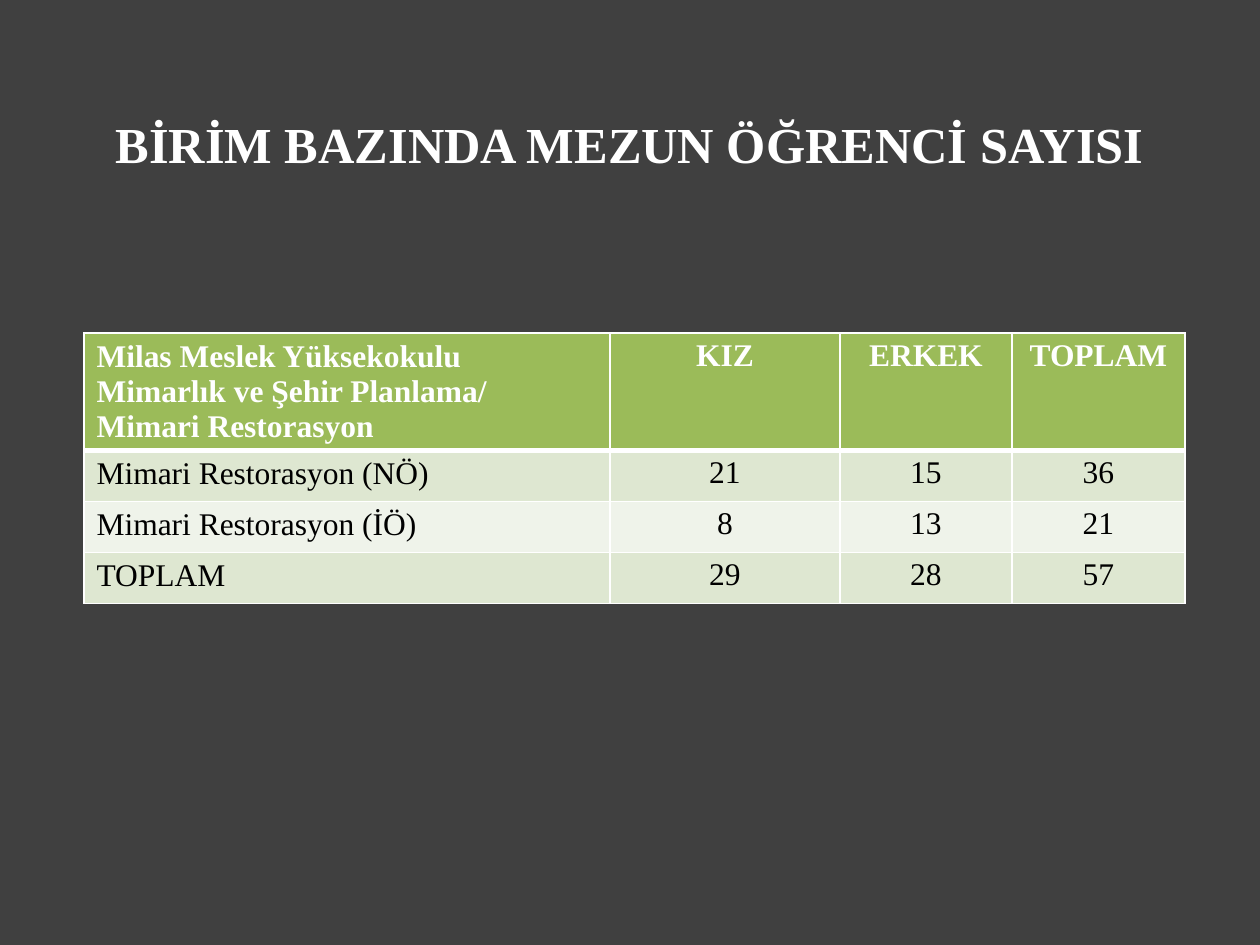
from dataclasses import dataclass

from lxml.etree import SubElement
from pptx import Presentation
from pptx.dml.color import RGBColor
from pptx.enum.text import MSO_ANCHOR, MSO_AUTO_SIZE, PP_ALIGN
from pptx.oxml.ns import qn
from pptx.util import Emu, Pt

SCALE = 914400 / 126


def px(n):
    """Turn pixels into EMU."""
    return Emu(round(n * SCALE))


@dataclass(frozen=True)
class Theme:
    """Colours, font and type sizes of the slide."""

    font: str = "Times New Roman"
    back: str = "404040"
    light: str = "FFFFFF"
    dark: str = "000000"
    head: str = "9BBB59"
    bands: tuple = ("DEE7D1", "EFF3EA")
    title: float = 28.8
    body: float = 18


class Deck:
    """Holds the theme and the current slide."""

    def __init__(self, theme, width, height):
        """Open a title-only slide on a plain ground."""
        self.theme = theme
        self.show = Presentation()
        self.show.slide_width, self.show.slide_height = px(width), px(height)
        self.slide = self.show.slides.add_slide(self.show.slide_layouts[5])
        fill = self.slide.background.fill
        fill.solid()
        fill.fore_color.rgb = RGBColor.from_string(theme.back)

    def run(self, para, text, size, color, bold):
        """Add one styled run."""
        run = para.add_run()
        run.text = text
        font = run.font
        font.name, font.size, font.bold = self.theme.font, Pt(size), bold
        font.color.rgb = RGBColor.from_string(color)

    def title(self, text, box, inset):
        """Place and fill the title."""
        shape = self.slide.shapes.title
        shape.left, shape.top, shape.width, shape.height = map(px, box)
        frame = shape.text_frame
        frame.auto_size = MSO_AUTO_SIZE.NONE
        frame.word_wrap = True
        frame.vertical_anchor = MSO_ANCHOR.TOP
        frame.margin_top, frame.margin_bottom = px(inset), 0
        para = frame.paragraphs[0]
        para.alignment = PP_ALIGN.CENTER
        self.run(para, text, self.theme.title, self.theme.light, True)

    def edge(self, cell, side, width):
        """Draw one white border of a cell."""
        props = cell._tc.get_or_add_tcPr()
        line = SubElement(props, qn(f"a:ln{side}"), w=str(Pt(width)))
        fill = SubElement(line, qn("a:solidFill"))
        SubElement(fill, qn("a:srgbClr"), val=self.theme.light)

    def cell(self, cell, text, row, col):
        """Style and fill one cell by its place in the grid."""
        theme, head = self.theme, row == 0
        for side in "LRTB":
            thick = (row, side) in ((0, "B"), (1, "T"))
            self.edge(cell, side, 3 if thick else 1)
        cell.fill.solid()
        shade = theme.head if head else theme.bands[(row - 1) % 2]
        cell.fill.fore_color.rgb = RGBColor.from_string(shade)
        if col:
            cell.margin_left = cell.margin_right = px(9)
            cell.margin_top = cell.margin_bottom = 0
        frame = cell.text_frame
        for i, part in enumerate(text.split("\n")):
            para = frame.add_paragraph() if i else frame.paragraphs[0]
            if col:
                para.alignment = PP_ALIGN.CENTER
                para.line_spacing = 1.15
            color = theme.light if head else theme.dark
            self.run(para, part, theme.body, color, head)

    def table(self, rows, left, top, widths, heights):
        """Add the table, row by row."""
        table = self.slide.shapes.add_table(
            len(rows), len(widths), px(left), px(top),
            px(sum(widths)), px(sum(heights))).table
        for col, width in zip(table.columns, widths):
            col.width = px(width)
        for r, (row, height) in enumerate(zip(rows, heights)):
            table.rows[r].height = px(height)
            for c, text in enumerate(row):
                self.cell(table.cell(r, c), text, r, c)


def main():
    """Build the slide of graduate counts."""
    deck = Deck(Theme(), 1260, 945)
    deck.title("BİRİM BAZINDA MEZUN ÖĞRENCİ SAYISI", (0, 45, 1260, 118), 68)
    school = ("Milas Meslek Yüksekokulu\nMimarlık ve Şehir Planlama/\n"
              "Mimari Restorasyon")
    rows = [
        (school, "KIZ", "ERKEK", "TOPLAM"),
        ("Mimari Restorasyon (NÖ)", "21", "15", "36"),
        ("Mimari Restorasyon (İÖ)", "8", "13", "21"),
        ("TOPLAM", "29", "28", "57"),
    ]
    deck.table(rows, 84, 333, (526, 230, 172, 173), (117, 51, 51, 51))
    deck.show.save("out.pptx")


if __name__ == "__main__":
    main()
